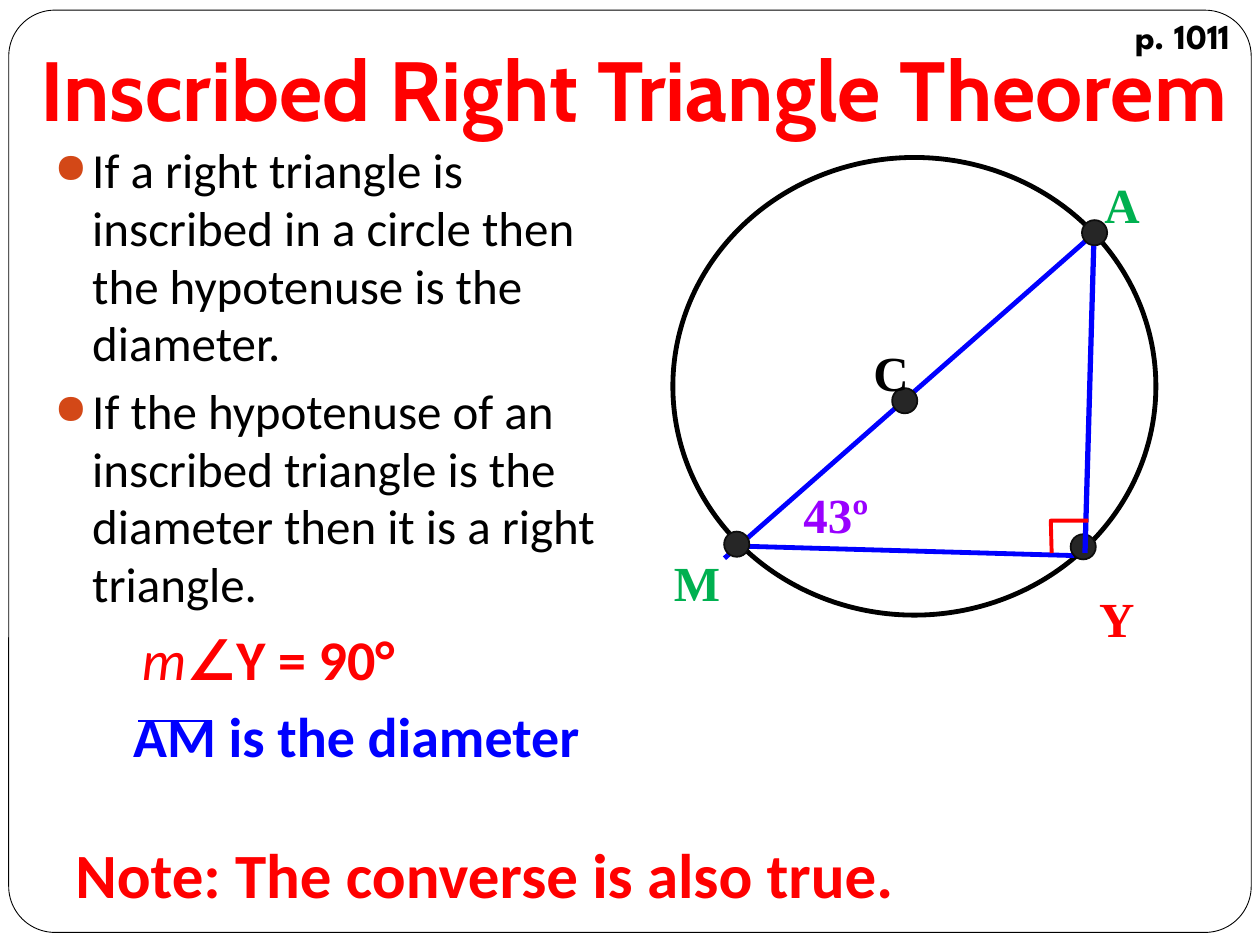
from lxml import etree
from pptx import Presentation
from pptx.dml.color import RGBColor
from pptx.enum.shapes import MSO_CONNECTOR, MSO_SHAPE
from pptx.enum.text import MSO_ANCHOR, PP_ALIGN
from pptx.oxml.ns import qn
from pptx.util import Pt

LINE = MSO_CONNECTOR.STRAIGHT
OVAL, ROUND = MSO_SHAPE.OVAL, MSO_SHAPE.ROUNDED_RECTANGLE
TOP, BOTTOM = MSO_ANCHOR.TOP, MSO_ANCHOR.BOTTOM
LEFT, RIGHT = PP_ALIGN.LEFT, PP_ALIGN.RIGHT

HEX = {"red": "FF0000", "blue": "0000FF", "green": "00B050", "violet": "9900FF",
       "black": "000000", "white": "FFFFFF", "dot": "262626", "rim": "0D0D0D",
       "bullet": "D34817"}

TITLE = "Inscribed Right Triangle Theorem"
NOTE = "Note: The converse is also true."
PAGE = "p. 1011"
RULES = [
    "If a right triangle is inscribed in a circle then the hypotenuse is the diameter.",
    "If the hypotenuse of an inscribed triangle is the diameter then it is a right triangle.",
]
FACTS = [
    (50, "red", [("m", False, True), ("∠Y = 90°", True, False)]),
    (45, "blue", [("AM is the diameter", True, False)]),
]
LABELS = [
    ("A", 624, 96, "green"),
    ("Y", 621, 333, "red"),
    ("M", 378, 312, "green"),
    ("C", 492, 192, "black"),
    ("43º", 452, 273.6, "violet"),
]
DOTS = [(625.5, 133), (619, 312.5), (421, 311), (517, 229)]
SIZE = 14.4
SIDES = [((414, 319), (620, 138), 2.75), ((420, 312), (614, 317.5), 2.75)]
LEG = ((625, 140.5), (620, 316), 3)
BAR = ((79, 412), (121, 412), 1.5)
ANGLE = [(601, 316), (600.5, 297.5), (622, 297.5)]


def rgb(name):
    return RGBColor.from_string(HEX[name])


def paint(shape, fill, line, width):
    shape.shadow.inherit = False
    if fill:
        shape.fill.solid()
        shape.fill.fore_color.rgb = rgb(fill)
    else:
        shape.fill.background()
    shape.line.color.rgb = rgb(line)
    shape.line.width = Pt(width)


def draw(kind, box, fill, line, width):
    shape = shapes.add_shape(kind, *map(Pt, box))
    paint(shape, fill, line, width)
    return shape


def link(start, end, width):
    line = shapes.add_connector(LINE, *map(Pt, start + end))
    line.line.color.rgb = rgb("blue")
    line.line.width = Pt(width)
    etree.SubElement(line._element.spPr, qn("a:effectLst"))


def frame(box, anchor=TOP):
    text = shapes.add_textbox(*map(Pt, box)).text_frame
    text.word_wrap = True
    text.vertical_anchor = anchor
    if anchor == BOTTOM:
        text.margin_bottom = Pt(7.2)
    return text


def style(font, face, size, color, bold=None):
    font.name, font.size, font.bold = face, Pt(size), bold
    font.color.rgb = rgb(color)


def write(words, box, face, size, color, anchor=TOP, align=LEFT):
    par = frame(box, anchor).paragraphs[0]
    par.text = words
    par.alignment = align
    style(par.font, face, size, color, True)


def indent(par, left, hang=0):
    props = par._p.get_or_add_pPr()
    props.set("marL", str(Pt(left)))
    props.set("indent", str(Pt(-hang)))
    return props


def bullet(par):
    props = indent(par, 21.6, 21.6)
    color = etree.SubElement(props, qn("a:buClr"))
    etree.SubElement(color, qn("a:srgbClr"), val=HEX["bullet"])
    etree.SubElement(props, qn("a:buSzPct"), val="85000")
    etree.SubElement(props, qn("a:buChar"), char="●")


def body():
    text = frame((24, 78, 336, 390))
    pars = [text.paragraphs[0]]
    pars += [text.add_paragraph() for _ in (RULES + FACTS)[1:]]
    for par in pars:
        par.space_before = Pt(5.8)
    for par, words in zip(pars, RULES):
        par.text = words
        par.line_spacing = 0.98
        style(par.font, "Calibri", 28, "black")
        bullet(par)
    for par, (left, color, runs) in zip(pars[len(RULES):], FACTS):
        indent(par, left)
        style(par.font, "Calibri", 32, color)
        for words, bold, slant in runs:
            run = par.add_run()
            run.text = words
            style(run.font, "Calibri", 32, color, bold)
            run.font.italic = slant


deck = Presentation()
deck.slide_width, deck.slide_height = Pt(720), Pt(540)
shapes = deck.slides.add_slide(deck.slide_layouts[6]).shapes

border = draw(ROUND, (5, 5.8, 710, 527), "white", "black", 0.5)
border.adjustments[0] = 0.05
write(TITLE, (16, 14.4, 696, 72), "Cabin", 48, "red", BOTTOM)
body()

draw(OVAL, (384.5, 90, 276, 261.5), None, "black", 2.75)
for side in SIDES:
    link(*side)
for x, y in DOTS:
    draw(OVAL, (x - SIZE / 2, y - SIZE / 2, SIZE, SIZE), "dot", "rim", 1)
link(*LEG)
link(*BAR)

pen = shapes.build_freeform(*map(Pt, ANGLE[0]))
pen.add_line_segments([(Pt(x), Pt(y)) for x, y in ANGLE[1:]], close=False)
paint(pen.convert_to_shape(), None, "red", 2.25)

for words, x, y, color in LABELS:
    write(words, (x, y, 72, 41), "Times New Roman", 28, color)
write(NOTE, (36, 456, 696, 72), "Calibri", 36, "red", BOTTOM)
write(PAGE, (140, 5, 570, 36), "League Spartan", 20, "black", align=RIGHT)

deck.save("out.pptx")
